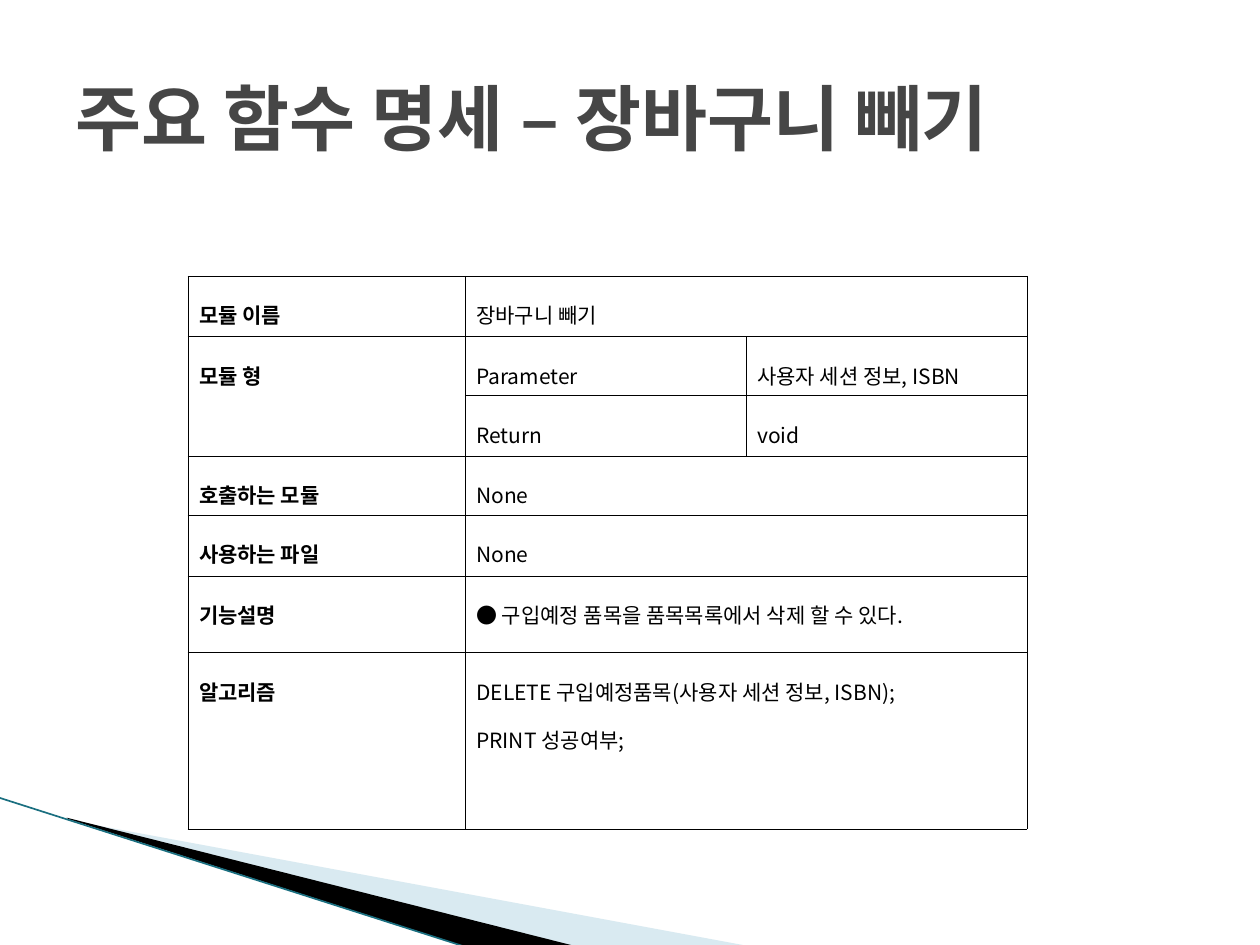
from dataclasses import dataclass

import pptx
import pptx.dml.color
import pptx.enum.shapes
import pptx.enum.text
import pptx.oxml
import pptx.oxml.ns
import pptx.util
from pptx.util import Inches

COLORS = {"title": "464646", "text": "000000", "border": "000000",
          "pale": "A0CBDC", "dark": "000000", "edge": "1A6F80"}
TITLE_FORMAT = {"name": "Noto Sans Mono", "size": pptx.util.Pt(41), "bold": True}
LABEL_FORMAT = {"name": "Noto Sans CJK KR", "size": pptx.util.Pt(12), "bold": True}
VALUE_FORMAT = {**LABEL_FORMAT, "bold": False}
CELL_MARGINS = {"margin_left": Inches(0.09), "margin_right": Inches(0.09),
                "margin_top": Inches(0.04), "margin_bottom": Inches(0.04)}
COLUMN_WIDTHS = (2.2, 2.23, 2.23)
ROW_HEIGHTS = (0.48, 0.47, 0.48, 0.47, 0.48, 0.61, 1.4)


@dataclass
class Wedge:
    points: list
    color: str
    opacity: int = 100


@dataclass
class Entry:
    row: int
    column: int
    lines: tuple
    rows: int = 1
    columns: int = 1


WEDGES = [
    Wedge([(0.55, 6.51), (5.95, 7.51), (4.56, 7.51), (0.55, 6.5)], "pale", 40),
    Wedge([(0.53, 6.49), (4.57, 7.51), (3.72, 7.52), (0.54, 6.5)], "dark"),
]
ENTRIES = [
    Entry(0, 0, ("모듈 이름",)),
    Entry(0, 1, ("장바구니 빼기",), columns=2),
    Entry(1, 0, ("모듈 형",), rows=2),
    Entry(1, 1, ("Parameter",)),
    Entry(1, 2, ("사용자 세션 정보, ISBN",)),
    Entry(2, 1, ("Return",)),
    Entry(2, 2, ("void",)),
    Entry(3, 0, ("호출하는 모듈",)),
    Entry(3, 1, ("None",), columns=2),
    Entry(4, 0, ("사용하는 파일",)),
    Entry(4, 1, ("None",), columns=2),
    Entry(5, 0, ("기능설명",)),
    Entry(5, 1, ("● 구입예정 품목을 품목목록에서 삭제 할 수 있다.",), columns=2),
    Entry(6, 0, ("알고리즘",)),
    Entry(6, 1, ("DELETE 구입예정품목(사용자 세션 정보, ISBN);", "PRINT 성공여부;"), columns=2),
]


def rgb(name: str) -> pptx.dml.color.RGBColor:
    return pptx.dml.color.RGBColor.from_string(COLORS[name])


def apply(target, values: dict) -> None:
    for attribute, value in values.items():
        setattr(target, attribute, value)


def add_xml(parent, tag: str, **attributes: str):
    element = pptx.oxml.parse_xml(f"<{tag} {pptx.oxml.ns.nsdecls('a')}/>")
    for name, value in attributes.items():
        element.set(name, value)
    parent.append(element)
    return element


def write_run(paragraph, text: str, values: dict, color: str) -> None:
    run = paragraph.add_run()
    run.text = text
    apply(run.font, values)
    run.font.color.rgb = rgb(color)


def draw_wedge(slide, wedge: Wedge) -> None:
    start, *rest = [(Inches(x), Inches(y)) for x, y in wedge.points]
    builder = slide.shapes.build_freeform(*start)
    builder.add_line_segments(rest, close=True)
    shape = builder.convert_to_shape()
    shape.shadow.inherit = False
    shape.fill.solid()
    shape.fill.fore_color.rgb = rgb(wedge.color)
    shape.line.fill.background()
    if wedge.opacity < 100:
        color = shape._element.spPr.find(".//" + pptx.oxml.ns.qn("a:srgbClr"))
        add_xml(color, "a:alpha", val=str(wedge.opacity * 1000))


def draw_edge(slide) -> None:
    edge = slide.shapes.add_connector(
        pptx.enum.shapes.MSO_CONNECTOR.STRAIGHT,
        Inches(-0.01), Inches(6.33), Inches(3.71), Inches(7.52))
    edge.line.color.rgb = rgb("edge")
    edge.line.width = pptx.util.Pt(0.95)
    add_xml(edge._element.spPr, "a:effectLst")


def draw_title(slide, text: str) -> None:
    title = slide.shapes.add_textbox(Inches(0.5), Inches(0.3), Inches(9), Inches(1.25))
    apply(title.text_frame, {"word_wrap": True,
                             "vertical_anchor": pptx.enum.text.MSO_ANCHOR.MIDDLE})
    write_run(title.text_frame.paragraphs[0], text, TITLE_FORMAT, "title")


def style_cell(cell) -> None:
    apply(cell, CELL_MARGINS)
    properties = cell._tc.get_or_add_tcPr()
    for side in ("lnL", "lnR", "lnT", "lnB"):
        border = add_xml(properties, f"a:{side}", w=str(pptx.util.Pt(0.25)))
        add_xml(add_xml(border, "a:solidFill"), "a:srgbClr", val=COLORS["border"])
    cell.fill.background()


def fill_entry(table, entry: Entry) -> None:
    cell = table.cell(entry.row, entry.column)
    if entry.rows > 1 or entry.columns > 1:
        cell.merge(table.cell(entry.row + entry.rows - 1,
                              entry.column + entry.columns - 1))
    values = VALUE_FORMAT if entry.column else LABEL_FORMAT
    frame = cell.text_frame
    for index, line in enumerate(entry.lines):
        paragraph = frame.add_paragraph() if index else frame.paragraphs[0]
        apply(paragraph, {"alignment": pptx.enum.text.PP_ALIGN.JUSTIFY,
                          "line_spacing": 1.6})
        write_run(paragraph, line, values, "text")


def draw_specification(slide) -> None:
    table = slide.shapes.add_table(
        len(ROW_HEIGHTS), len(COLUMN_WIDTHS), Inches(1.49), Inches(2.19),
        Inches(sum(COLUMN_WIDTHS)), Inches(sum(ROW_HEIGHTS))).table
    apply(table, {"first_row": False, "horz_banding": False})
    for column, width in zip(table.columns, COLUMN_WIDTHS):
        column.width = Inches(width)
    for row, height in zip(table.rows, ROW_HEIGHTS):
        row.height = Inches(height)
    for cell in table.iter_cells():
        style_cell(cell)
    for entry in ENTRIES:
        fill_entry(table, entry)


def main() -> None:
    deck = pptx.Presentation()
    apply(deck, {"slide_width": Inches(10), "slide_height": Inches(7.5)})
    slide = deck.slides.add_slide(deck.slide_layouts[6])
    # Corner decoration
    for wedge in WEDGES:
        draw_wedge(slide, wedge)
    draw_edge(slide)
    # Heading and function specification
    draw_title(slide, "주요 함수 명세 – 장바구니 빼기")
    draw_specification(slide)
    deck.save("out.pptx")


if __name__ == "__main__":
    main()
